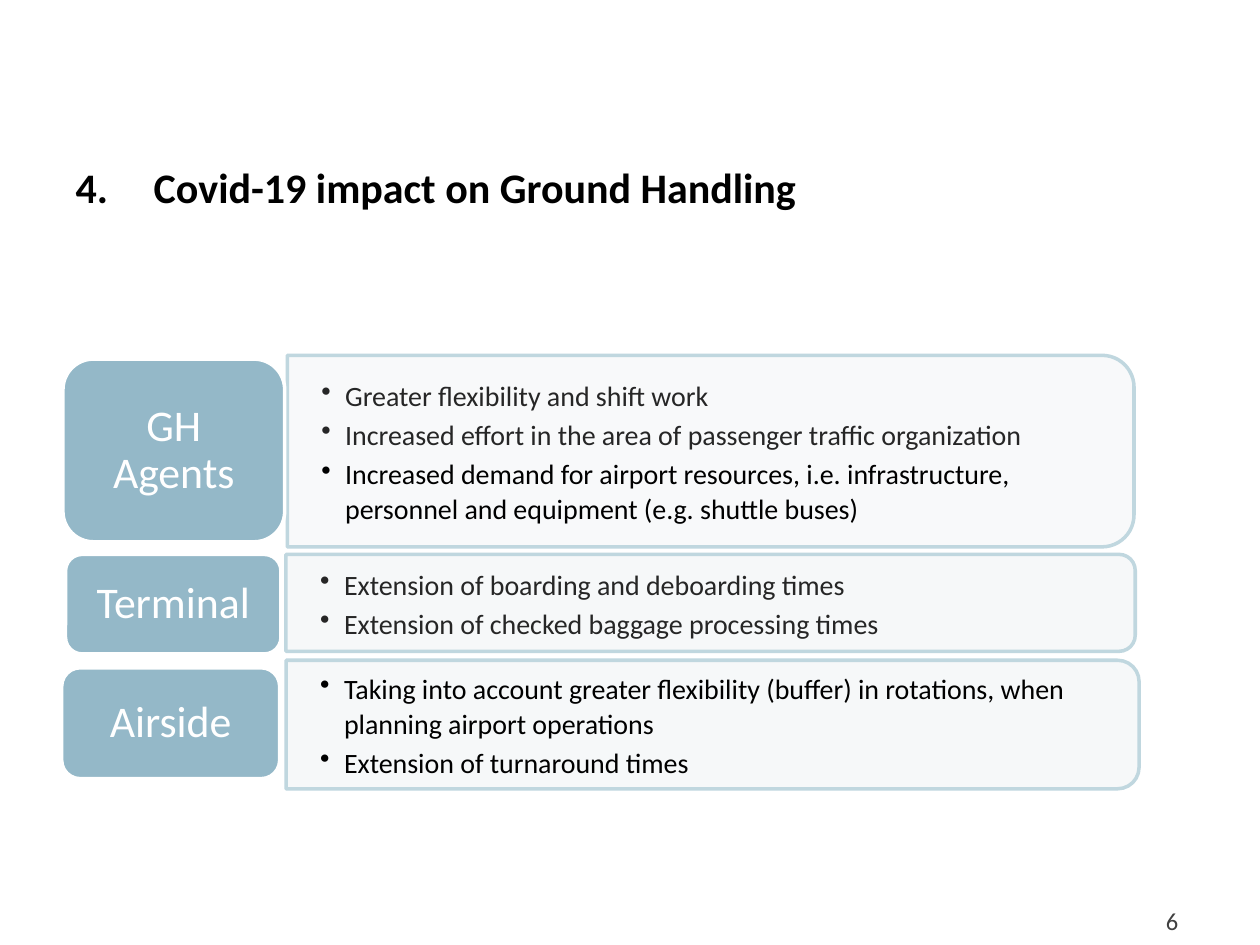
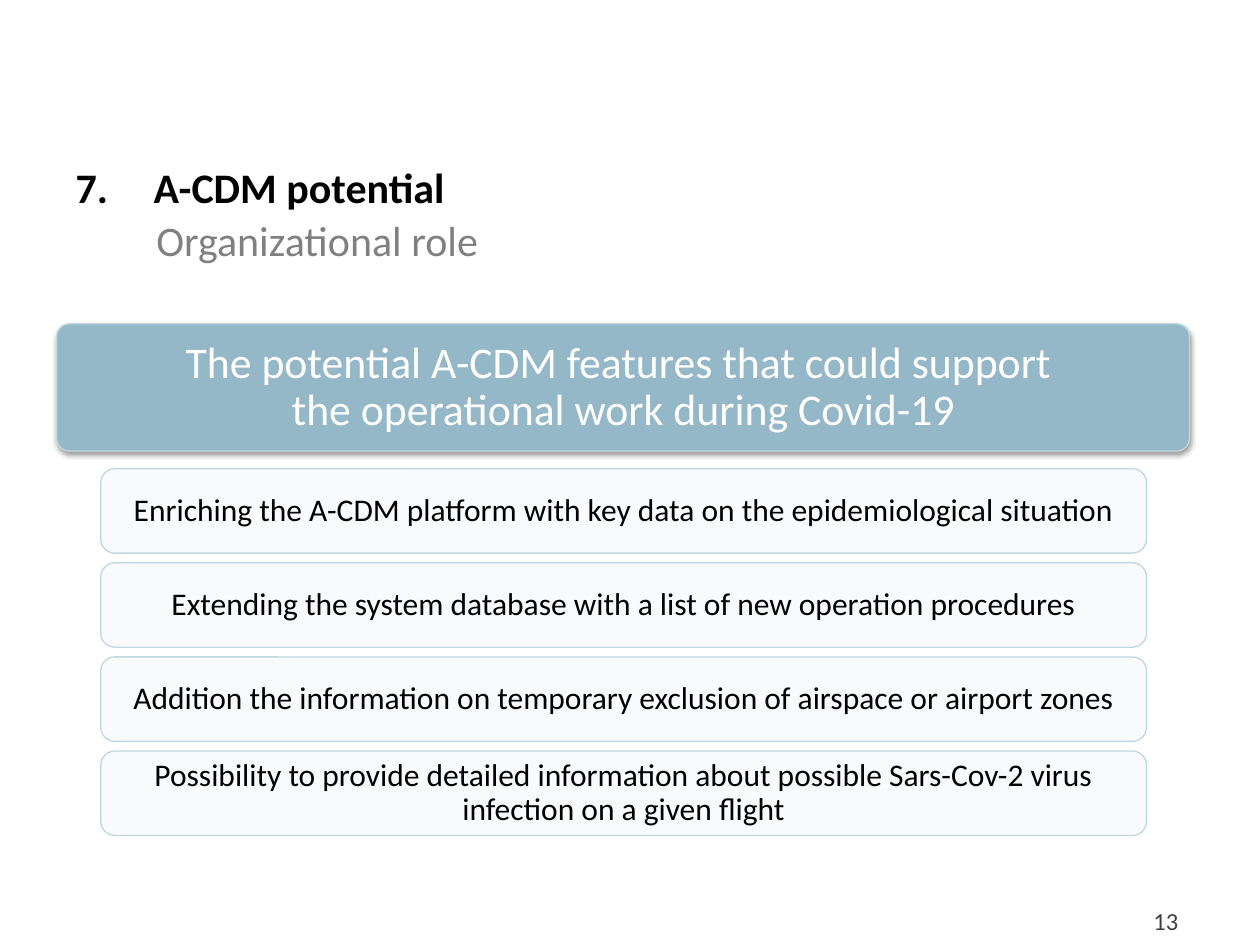
import pptx
import pptx.dml.color
import pptx.enum.shapes
import pptx.enum.text
import pptx.oxml
import pptx.oxml.ns
import pptx.util

RGBColor = pptx.dml.color.RGBColor
BLACK = RGBColor(0x00, 0x00, 0x00)
DARK = RGBColor(0x26, 0x26, 0x26)
NUMBER_GRAY = RGBColor(0x40, 0x40, 0x40)
SUBTITLE_GRAY = RGBColor(0x80, 0x80, 0x80)
WHITE = RGBColor(0xFF, 0xFF, 0xFF)
BLUE = RGBColor(0x94, 0xB8, 0xC8)
PALE_LINE = RGBColor(0xC0, 0xD7, 0xDF)
PANEL_SOLID = RGBColor(0xF8, 0xF9, 0xFA)
PANEL_TINT = RGBColor(0xE2, 0xEB, 0xEE)
BAR_TINT = RGBColor(0xE9, 0xF0, 0xF3)

FONT = "Calibri"
SHAPE = pptx.enum.shapes.MSO_SHAPE
ANCHOR = pptx.enum.text.MSO_ANCHOR
ALIGN = pptx.enum.text.PP_ALIGN
NAMESPACE = pptx.oxml.ns.nsdecls("a")

presentation = pptx.Presentation()
presentation.slide_width = pptx.util.Inches(10)
presentation.slide_height = pptx.util.Inches(7.5)

# Grid of 100 columns and 75 rows
COLUMN = presentation.slide_width // 100
ROW = presentation.slide_height // 75


def add_box(slide, kind, left, top, width, height, fill, line, line_width, opacity=100):
    """Add a preset shape, placed in grid columns and rows."""
    shape = slide.shapes.add_shape(
        kind, round(left * COLUMN), round(top * ROW), round(width * COLUMN), round(height * ROW))
    shape.shadow.inherit = False
    shape.fill.solid()
    shape.fill.fore_color.rgb = fill
    shape.line.color.rgb = line
    shape.line.width = pptx.util.Pt(line_width)
    if opacity < 100:
        color = shape.fill._xPr.find(".//" + pptx.oxml.ns.qn("a:srgbClr"))
        color.append(pptx.oxml.parse_xml(f'<a:alpha {NAMESPACE} val="{opacity * 1000}"/>'))
    return shape


def write(shape, text, size, color, align=ALIGN.LEFT, anchor=ANCHOR.TOP,
          side_margin=1, edge_margin=0.5, spacing=None, bold=False):
    """Put one paragraph into a shape and format it; margins are in columns and rows."""
    frame = shape.text_frame
    frame.word_wrap = True
    frame.auto_size = pptx.enum.text.MSO_AUTO_SIZE.NONE
    frame.vertical_anchor = anchor
    frame.margin_left = frame.margin_right = round(side_margin * COLUMN)
    frame.margin_top = frame.margin_bottom = round(edge_margin * ROW)
    paragraph = frame.paragraphs[0]
    paragraph.text = text
    paragraph.alignment = align
    paragraph.space_before = pptx.util.Pt(0)
    paragraph.line_spacing = spacing
    paragraph.font.name = FONT
    paragraph.font.size = pptx.util.Pt(size)
    paragraph.font.bold = bold
    paragraph.font.color.rgb = color
    return paragraph


# Shared parts: numbered title and page number
slides = []
for layout, title_number, title, page in [
    (5, 4, "Covid-19 impact on Ground Handling", "6"),
    (1, 7, "A-CDM potential", "13"),
]:
    slide = presentation.slides.add_slide(presentation.slide_layouts[layout])
    slides.append(slide)

    heading = slide.shapes.title
    heading.left, heading.top = 5 * COLUMN, round(12.3 * ROW)
    heading.width, heading.height = 90 * COLUMN, round(4.4 * ROW)
    properties = heading.text_frame.paragraphs[0]._p.get_or_add_pPr()
    properties.set("marL", str(round(6.2 * COLUMN)))
    properties.set("indent", str(round(-6.2 * COLUMN)))
    properties.append(pptx.oxml.parse_xml(f'<a:buFont {NAMESPACE} typeface="+mj-lt"/>'))
    properties.append(pptx.oxml.parse_xml(
        f'<a:buAutoNum {NAMESPACE} type="arabicPeriod" startAt="{title_number}"/>'))
    write(heading, title, 24, BLACK, bold=True)

    page_box = slide.shapes.add_textbox(
        round(71.2 * COLUMN), round(71.4 * ROW), round(23.3 * COLUMN), round(3.3 * ROW))
    write(page_box, page, 14, NUMBER_GRAY, ALIGN.RIGHT)

impact_slide, potential_slide = slides

# Impact slide: label and bulleted panel for each area
areas = [
    # name, label box, panel box, fill, opacity, points
    ("GH Agents", (5, 28.5, 17.6, 14.5), (22.8, 28.2, 67.2, 15.2), PANEL_SOLID, 100, [
        ("Greater flexibility and shift work", DARK),
        ("Increased effort in the area of passenger traffic organization", DARK),
        ("Increased demand for airport resources, i.e. infrastructure, "
         "personnel and equipment (e.g. shuttle buses)", BLACK)]),
    ("Terminal", (5.2, 44, 17.1, 7.9), (22.7, 44, 67.4, 7.7), PANEL_TINT, 30, [
        ("Extension of boarding and deboarding times", DARK),
        ("Extension of checked baggage processing times", DARK)]),
    ("Airside", (4.9, 53, 17.3, 8.8), (22.7, 52.4, 67.7, 10.2), PANEL_TINT, 30, [
        ("Taking into account greater flexibility (buffer) in rotations, "
         "when planning airport operations", BLACK),
        ("Extension of turnaround times", BLACK)]),
]
for name, label_box, panel_box, fill, opacity, points in areas:
    # The panel is turned so that its round corners face right
    left, top, width, height = panel_box
    panel = add_box(impact_slide, SHAPE.ROUND_2_SAME_RECTANGLE,
                    left + (width - height) / 2, top + (height - width) / 2,
                    height, width, fill, PALE_LINE, 2, opacity)
    panel.rotation = 90

    point_box = impact_slide.shapes.add_textbox(
        round(left * COLUMN), round(top * ROW), round((width - 0.6) * COLUMN), round(height * ROW))
    frame = point_box.text_frame
    frame.word_wrap = True
    frame.vertical_anchor = ANCHOR.MIDDLE
    frame.margin_left = frame.margin_right = round(2.7 * COLUMN)
    frame.margin_top = frame.margin_bottom = 0
    for index, (text, color) in enumerate(points):
        paragraph = frame.add_paragraph() if index else frame.paragraphs[0]
        paragraph.text = text
        properties = paragraph._p.get_or_add_pPr()
        properties.set("marL", str(round(1.9 * COLUMN)))
        properties.set("indent", str(round(-1.9 * COLUMN)))
        properties.append(pptx.oxml.parse_xml(f'<a:buChar {NAMESPACE} char="•"/>'))
        paragraph.line_spacing = pptx.util.Pt(20)
        paragraph.space_after = pptx.util.Pt(2.4)
        paragraph.font.name = FONT
        paragraph.font.size = pptx.util.Pt(16)
        paragraph.font.color.rgb = color

    label = add_box(impact_slide, SHAPE.ROUNDED_RECTANGLE, *label_box, BLUE, WHITE, 2)
    write(label, name, 25, WHITE, ALIGN.CENTER, ANCHOR.MIDDLE, spacing=0.9)

# Potential slide: subtitle
subtitle = potential_slide.placeholders[1]
subtitle.left, subtitle.top = round(11.4 * COLUMN), round(16.5 * ROW)
subtitle.width, subtitle.height = round(83.7 * COLUMN), round(3.2 * ROW)
properties = subtitle.text_frame.paragraphs[0]._p.get_or_add_pPr()
properties.set("marL", "0")
properties.set("indent", "0")
properties.append(pptx.oxml.parse_xml(f"<a:buNone {NAMESPACE}/>"))
write(subtitle, "Organizational role", 24, SUBTITLE_GRAY)

# Potential slide: header bar with a soft shadow
header = add_box(potential_slide, SHAPE.ROUNDED_RECTANGLE,
                 4.5, 25.7, 89.9, 10.1, BLUE, PALE_LINE, 0.75)
header.adjustments[0] = 0.1
effects = header._element.spPr.find(pptx.oxml.ns.qn("a:effectLst"))
effects.append(pptx.oxml.parse_xml(
    f'<a:outerShdw {NAMESPACE} blurRad="{pptx.util.Pt(3.1)}" dist="{pptx.util.Pt(1.6)}" '
    'dir="5400000" rotWithShape="0">'
    '<a:srgbClr val="000000"><a:alpha val="38000"/></a:srgbClr></a:outerShdw>'))
write(header, "The potential A-CDM features that could support \vthe operational work during Covid-19",
      25, WHITE, ALIGN.CENTER, ANCHOR.MIDDLE, 0.5, 0.3, 0.9)

# Potential slide: equal feature bars
features = [
    "Enriching the A-CDM platform with key data on the epidemiological situation",
    "Extending the system database with a list of new operation procedures",
    "Addition the information on temporary exclusion of airspace or airport zones",
    "Possibility to provide detailed information about possible Sars-Cov-2 virus "
    "infection on a given flight",
]
for index, feature in enumerate(features):
    bar = add_box(potential_slide, SHAPE.ROUNDED_RECTANGLE,
                  8, 37.2 + 7.47 * index, 83, 6.7, BAR_TINT, PALE_LINE, 0.75, 30)
    write(bar, feature, 18, BLACK, ALIGN.CENTER, ANCHOR.MIDDLE, 1.4, 0, 0.9)

presentation.save("out.pptx")
